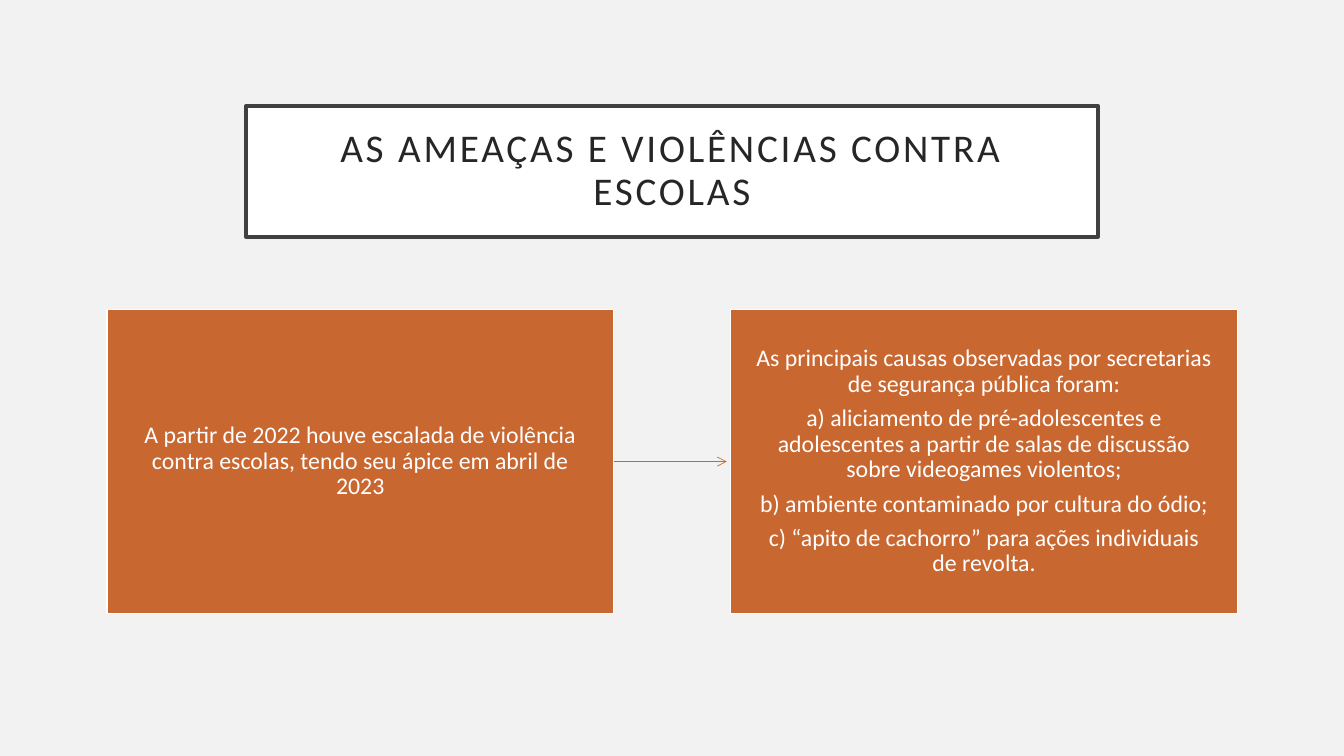
from pptx import Presentation
from pptx.dml.color import RGBColor
from pptx.enum.shapes import MSO_CONNECTOR, MSO_SHAPE
from pptx.enum.text import MSO_ANCHOR, PP_ALIGN
from pptx.oxml.ns import qn
from pptx.util import Pt
from lxml.etree import SubElement

COLORS = {
    "background": "F2F2F2",
    "white": "FFFFFF",
    "frame": "404040",
    "title": "262626",
    "accent": "C96731",
}


class SlideBuilder:
    font_name = "Calibri"
    line_spacing = 0.9

    def __init__(self, slide):
        self.slide = slide

    def color(self, name):
        return RGBColor.from_string(COLORS[name])

    def background(self, color):
        fill = self.slide.background.fill
        fill.solid()
        fill.fore_color.rgb = self.color(color)

    def box(self, left, top, width, height, fill, line, line_width):
        shape = self.slide.shapes.add_shape(
            MSO_SHAPE.RECTANGLE, Pt(left), Pt(top), Pt(width), Pt(height))
        shape.shadow.inherit = False
        shape.fill.solid()
        shape.fill.fore_color.rgb = self.color(fill)
        shape.line.color.rgb = self.color(line)
        shape.line.width = Pt(line_width)
        return shape

    def text(self, shape, paragraphs, size, color, margins, space_after=0, tracking=0):
        frame = shape.text_frame
        frame.word_wrap = True
        frame.vertical_anchor = MSO_ANCHOR.MIDDLE
        horizontal, vertical = margins
        frame.margin_left = frame.margin_right = Pt(horizontal)
        frame.margin_top = frame.margin_bottom = Pt(vertical)
        for index, content in enumerate(paragraphs):
            paragraph = frame.add_paragraph() if index else frame.paragraphs[0]
            paragraph.alignment = PP_ALIGN.CENTER
            paragraph.line_spacing = self.line_spacing
            paragraph.space_after = Pt(space_after)
            run = paragraph.add_run()
            run.text = content
            run.font.name = self.font_name
            run.font.size = Pt(size)
            run.font.color.rgb = self.color(color)
            if tracking:
                run.font._element.set("spc", str(tracking * 100))

    def arrow(self, start, end, y, color, width):
        connector = self.slide.shapes.add_connector(
            MSO_CONNECTOR.STRAIGHT, Pt(start), Pt(y), Pt(end), Pt(y))
        connector.line.color.rgb = self.color(color)
        connector.line.width = Pt(width)
        properties = connector._element.spPr
        SubElement(properties.find(qn("a:ln")), qn("a:tailEnd"), type="arrow")
        SubElement(properties, qn("a:effectLst"))


def main():
    presentation = Presentation()
    presentation.slide_width = Pt(960)
    presentation.slide_height = Pt(540)
    builder = SlideBuilder(presentation.slides.add_slide(presentation.slide_layouts[6]))
    builder.background("background")

    title = builder.box(175.7, 75.6, 608.6, 93.6, "white", "frame", 2.5)
    builder.text(title, ["AS AMEAÇAS E VIOLÊNCIAS CONTRA ESCOLAS"],
                 28, "title", (14.4, 14.4), tracking=2)

    card_left, card_top, card_width, card_height = 76.3, 221, 362, 217.4
    card_step = 445.6
    cards = [
        ["A partir de 2022 houve escalada de violência contra escolas, "
         "tendo seu ápice em abril de 2023"],
        ["As principais causas observadas por secretarias de segurança pública foram:",
         "a) aliciamento de pré-adolescentes e adolescentes a partir de salas "
         "de discussão sobre videogames violentos;",
         "b) ambiente contaminado por cultura do ódio;",
         "c) “apito de cachorro” para ações individuais de revolta."],
    ]
    arrow_start = card_left + card_width
    builder.arrow(arrow_start, arrow_start + 80.8, card_top + card_height / 2, "accent", 0.5)
    for index, paragraphs in enumerate(cards):
        card = builder.box(card_left + index * card_step, card_top,
                           card_width, card_height, "accent", "white", 1)
        builder.text(card, paragraphs, 17, "white", (17.8, 18.6), space_after=5.95)

    presentation.save("out.pptx")


if __name__ == "__main__":
    main()
